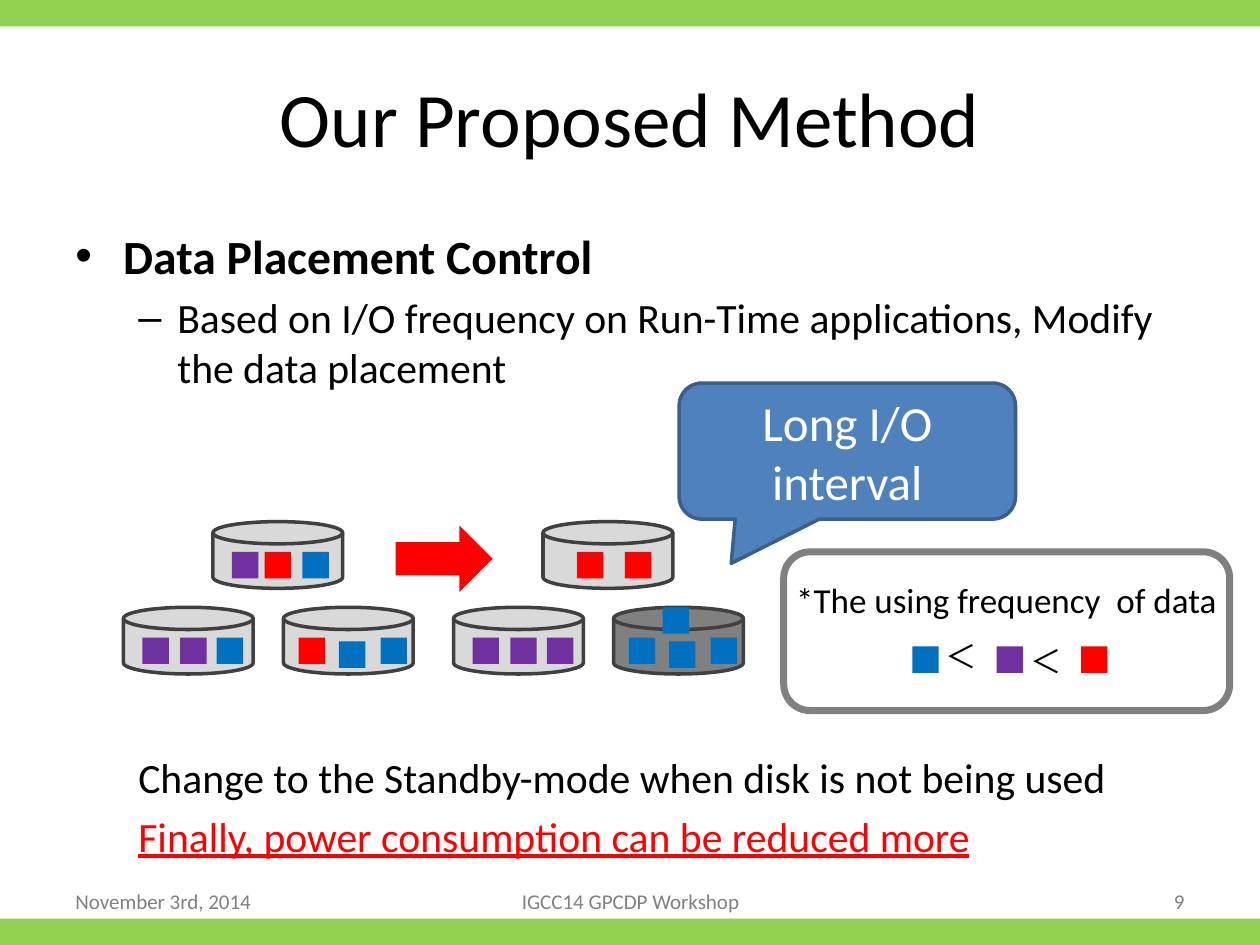
from dataclasses import dataclass

from lxml import etree
from pptx import Presentation
from pptx.dml.color import RGBColor
from pptx.enum import shapes, text
from pptx.oxml.ns import qn
from pptx.util import Inches, Pt


@dataclass(frozen=True)
class Theme:
    font: str = "Calibri"
    black: str = "000000"
    white: str = "FFFFFF"
    grey: str = "808080"
    green: str = "92D050"
    red: str = "FF0000"
    purple: str = "7030A0"
    blue: str = "0070C0"
    disk: str = "D9D9D9"
    disk_line: str = "404040"
    callout: str = "4F81BD"
    callout_line: str = "3A5F8C"
    title_size: float = 44
    callout_size: float = 28
    heading_size: float = 27.2
    body_size: float = 23.8
    legend_size: float = 20
    symbol_size: float = 18
    footer_size: float = 12


THEME = Theme()
KIND = shapes.MSO_SHAPE
ALIGN = text.PP_ALIGN
MIDDLE = text.MSO_ANCHOR.MIDDLE
BLOCK = 0.21
DISK_SIZE = (1.03, 0.53)
ROW = [(0.15, 0.24), (0.45, 0.24), (0.74, 0.24)]
DIPPED_ROW = [(0.12, 0.24), (0.44, 0.27), (0.77, 0.24)]


def add_shape(slide, kind, box, fill=None, line=None, line_width=2):
    shape = slide.shapes.add_shape(kind, *map(Inches, box))
    shape.shadow.inherit = False
    if fill:
        shape.fill.solid()
        shape.fill.fore_color.rgb = RGBColor.from_string(fill)
    else:
        shape.fill.background()
    if line:
        shape.line.color.rgb = RGBColor.from_string(line)
        shape.line.width = Pt(line_width)
    else:
        shape.line.fill.background()
    return shape


def write(paragraph, words, size, color=THEME.black, align=ALIGN.LEFT,
          bold=False, underline=False, before=0, bullet=None, indent=(0, 0)):
    """Fill a paragraph; indent is (left margin, first-line offset) in inches."""
    paragraph.alignment = align
    paragraph.space_before = Pt(before)
    if bullet:
        properties = paragraph._p.get_or_add_pPr()
        properties.set("marL", str(Inches(indent[0])))
        properties.set("indent", str(Inches(indent[1])))
        etree.SubElement(properties, qn("a:buFont")).set("typeface", "Arial")
        etree.SubElement(properties, qn("a:buChar")).set("char", bullet)
    run = paragraph.add_run()
    run.text = words
    run.font.name = THEME.font
    run.font.size = Pt(size)
    run.font.bold = bold
    run.font.underline = underline
    run.font.color.rgb = RGBColor.from_string(color)


def add_text_frame(slide, box, anchor=text.MSO_ANCHOR.TOP):
    frame = slide.shapes.add_textbox(*map(Inches, box)).text_frame
    frame.word_wrap = True
    frame.vertical_anchor = anchor
    return frame


def add_bands(slide):
    for top in (0, 7.29):
        add_shape(slide, KIND.RECTANGLE, (0, top, 10, 0.21), THEME.green)


def place_title(slide, box):
    title = slide.shapes.title
    title.left, title.top, title.width, title.height = map(Inches, box)
    title.text_frame.vertical_anchor = MIDDLE
    write(title.text_frame.paragraphs[0], "Our Proposed Method",
          THEME.title_size, align=ALIGN.CENTER)


def add_introduction(slide, box):
    frame = add_text_frame(slide, box)
    write(frame.paragraphs[0], "Data Placement Control", THEME.heading_size,
          bold=True, bullet="•", indent=(0.38, -0.38))
    write(frame.add_paragraph(),
          "Based on I/O frequency on Run-Time applications, Modify the data placement",
          THEME.body_size, before=4.8, bullet="–", indent=(0.81, -0.31))


def add_conclusion(slide, box):
    frame = add_text_frame(slide, box)
    write(frame.paragraphs[0],
          "Change to the Standby-mode when disk is not being used", THEME.body_size)
    write(frame.add_paragraph(), "Finally, power consumption can be reduced more",
          THEME.body_size, color=THEME.red, underline=True, before=4.8)


def add_footer(slide, top, height):
    for left, width, words, align in (
            (0.5, 2.33, "November 3rd, 2014", ALIGN.LEFT),
            (3.42, 3.17, "IGCC14 GPCDP Workshop", ALIGN.CENTER),
            (7.17, 2.33, "9", ALIGN.RIGHT)):
        frame = add_text_frame(slide, (left, top, width, height), MIDDLE)
        write(frame.paragraphs[0], words, THEME.footer_size, THEME.grey, align)


def add_block(slide, left, top, color):
    add_shape(slide, KIND.RECTANGLE, (left, top, BLOCK, BLOCK), color)


def add_disk_cluster(slide, left, top, contents, fills):
    """Three disks, one above two; contents holds (offsets, colors) per disk."""
    places = [(0.71, 0), (0, 0.68), (1.27, 0.68)]
    for (x, y), fill in zip(places, fills):
        add_shape(slide, KIND.FLOWCHART_MAGNETIC_DISK,
                  (left + x, top + y, *DISK_SIZE), fill, THEME.disk_line)
    for (x, y), (offsets, colors) in zip(places, contents):
        for (block_x, block_y), color in zip(offsets, colors):
            add_block(slide, left + x + block_x, top + y + block_y, color)


def add_placement_diagram(slide, left, top):
    red, purple, blue = THEME.red, THEME.purple, THEME.blue
    before = [([(0.15, 0.24), (0.41, 0.24), (0.71, 0.24)], [purple, red, blue]),
              (ROW, [purple, purple, blue]),
              (DIPPED_ROW, [red, blue, blue])]
    after = [([(0.27, 0.24), (0.65, 0.24)], [red] * 2),
             (ROW, [purple] * 3),
             (DIPPED_ROW + [(0.39, 0)], [blue] * 4)]
    add_disk_cluster(slide, left, top, before, [THEME.disk] * 3)
    add_shape(slide, KIND.RIGHT_ARROW, (left + 2.16, top + 0.03, 0.77, 0.53), red)
    add_disk_cluster(slide, left + 2.62, top, after,
                     [THEME.disk, THEME.disk, THEME.grey])


def add_callout(slide, box):
    callout = add_shape(slide, KIND.ROUNDED_RECTANGULAR_CALLOUT, box,
                        THEME.callout, THEME.callout_line)
    for index, value in enumerate((-0.345, 0.825, 0.167)):
        callout.adjustments[index] = value
    callout.text_frame.word_wrap = True
    callout.text_frame.vertical_anchor = MIDDLE
    write(callout.text_frame.paragraphs[0], "Long I/O interval",
          THEME.callout_size, THEME.white, ALIGN.CENTER)


def add_legend(slide, left, top, width, height):
    caption = add_text_frame(slide, (left, top + 0.16, 3.78, 0.44))
    write(caption.paragraphs[0], "*The using frequency  of data", THEME.legend_size)
    for index, color in enumerate((THEME.blue, THEME.purple, THEME.red)):
        add_block(slide, left + 1.02 + 0.67 * index, top + 0.75, color)
    for x, y in ((1.19, 0.63), (1.86, 0.67)):
        symbol = add_text_frame(slide, (left + x, top + y, 0.5, 0.4))
        write(symbol.paragraphs[0], "＜", THEME.symbol_size)
    add_shape(slide, KIND.ROUNDED_RECTANGLE, (left, top, width, height),
              line=THEME.grey, line_width=4)


def main():
    presentation = Presentation()
    presentation.slide_width, presentation.slide_height = Inches(10), Inches(7.5)
    slide = presentation.slides.add_slide(presentation.slide_layouts[5])
    add_bands(slide)
    place_title(slide, (0.5, 0.3, 9, 1.25))
    add_introduction(slide, (0.5, 1.75, 9, 1.4))
    add_conclusion(slide, (1, 5.92, 8.5, 0.97))
    add_footer(slide, 6.95, 0.4)
    add_placement_diagram(slide, 0.98, 4.14)
    add_callout(slide, (5.39, 3.04, 2.67, 1.08))
    add_legend(slide, 6.22, 4.38, 3.54, 1.26)
    presentation.save("out.pptx")


if __name__ == "__main__":
    main()
